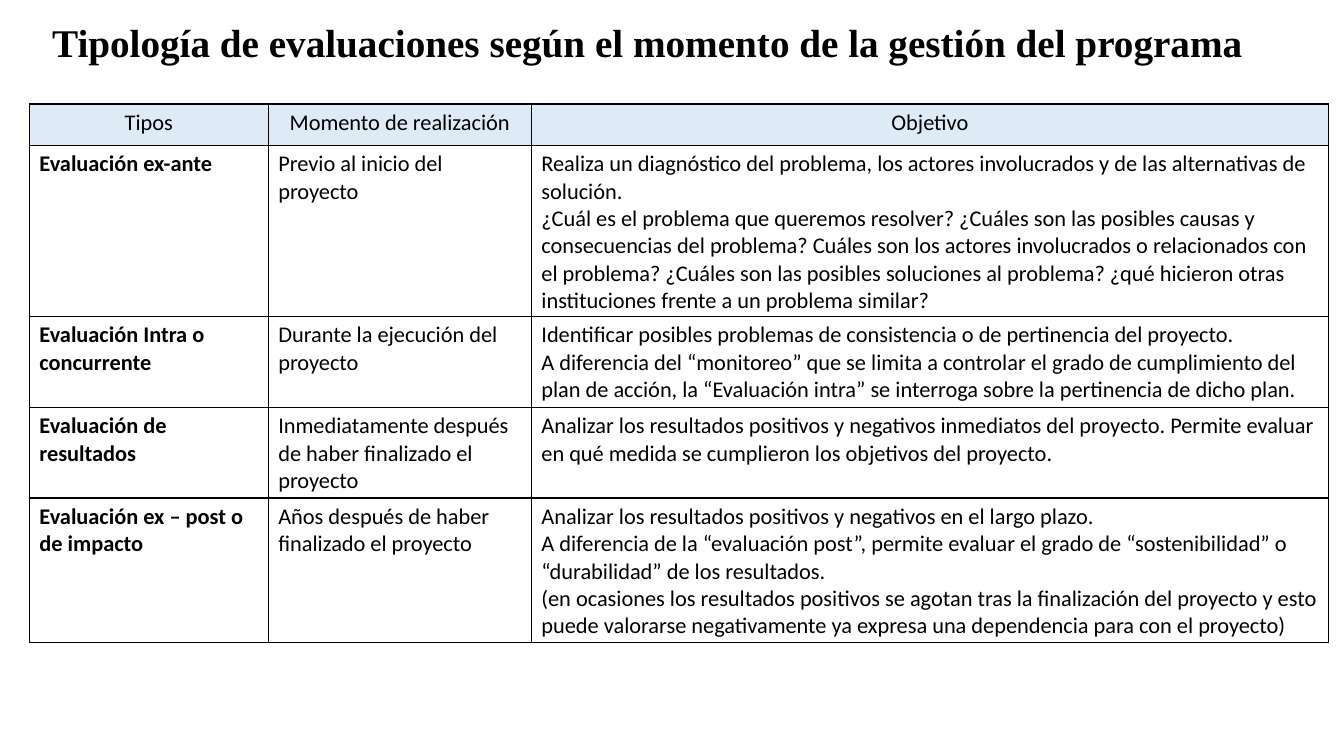
from dataclasses import dataclass

from lxml.etree import SubElement
from pptx import Presentation
from pptx.dml.color import RGBColor as Rgb
from pptx.enum.text import MSO_ANCHOR as Anchor, PP_ALIGN as Align
from pptx.oxml.ns import qn
from pptx.slide import Slide
from pptx.table import Table, _Cell as Cell
from pptx.text.text import TextFrame as Frame
from pptx.util import Cm, Pt

BLACK = "000000"
PALE = "DEEBF7"
WIDTHS = (6.02, 6.63, 20.09)
ROW = 1.04
HEADS = ("Tipos", "Momento de realización", "Objetivo")


@dataclass(frozen=True)
class Stage:
    name: str
    moment: str
    goals: tuple[str, ...]


@dataclass(frozen=True)
class Style:
    font: str = "Calibri"
    size: int = 16
    bold: bool = False
    align: Align = Align.LEFT


STAGES = (
    Stage(
        "Evaluación ex-ante",
        "Previo al inicio del proyecto",
        (
            "Realiza un diagnóstico del problema, los actores involucrados y de las "
            "alternativas de solución.",
            "¿Cuál es el problema que queremos resolver? ¿Cuáles son las posibles causas y "
            "consecuencias del problema? Cuáles son los actores involucrados o relacionados "
            "con el problema? ¿Cuáles son las posibles soluciones al problema? ¿qué hicieron "
            "otras instituciones frente a un problema similar?",
        ),
    ),
    Stage(
        "Evaluación Intra o concurrente",
        "Durante la ejecución del proyecto",
        (
            "Identificar posibles problemas de consistencia o de pertinencia del proyecto.",
            "A diferencia del “monitoreo” que se limita a controlar el grado de cumplimiento "
            "del plan de acción, la “Evaluación intra” se interroga sobre la pertinencia de "
            "dicho plan.",
        ),
    ),
    Stage(
        "Evaluación de resultados",
        "Inmediatamente después de haber finalizado el proyecto",
        (
            "Analizar los resultados positivos y negativos inmediatos del proyecto. Permite "
            "evaluar en qué medida se cumplieron los objetivos del proyecto.",
        ),
    ),
    Stage(
        "Evaluación ex – post o de impacto",
        "Años después de haber finalizado el proyecto",
        (
            "Analizar los resultados positivos y negativos en el largo plazo.",
            "A diferencia de la “evaluación post”, permite evaluar el grado de "
            "“sostenibilidad” o “durabilidad” de los resultados.",
            "(en ocasiones los resultados positivos se agotan tras la finalización del "
            "proyecto y esto puede valorarse negativamente ya expresa una dependencia para "
            "con el proyecto)",
        ),
    ),
)

TITLE = Style("Times New Roman", 28, True, Align.CENTER)
HEAD = Style(align=Align.CENTER)
NAME = Style(bold=True)
BODY = Style()


def color(code: str) -> Rgb:
    return Rgb.from_string(code)


def write(frame: Frame, text: str, style: Style) -> None:
    frame.text = text
    for para in frame.paragraphs:
        para.alignment = style.align
        for run in para.runs:
            run.font.name = style.font
            run.font.size = Pt(style.size)
            run.font.bold = style.bold
            run.font.color.rgb = color(BLACK)


def border(cell: Cell) -> None:
    props = cell._tc.get_or_add_tcPr()
    for side in ("a:lnL", "a:lnR", "a:lnT", "a:lnB"):
        line = SubElement(props, qn(side), w=str(Pt(1)))
        fill = SubElement(line, qn("a:solidFill"))
        SubElement(fill, qn("a:srgbClr"), val=BLACK)


def fill_row(table: Table, row: int, texts: tuple[str, ...], styles: tuple[Style, ...]) -> None:
    for col, (text, style) in enumerate(zip(texts, styles)):
        cell = table.cell(row, col)
        write(cell.text_frame, text, style)
        border(cell)
        if row == 0:
            cell.fill.solid()
            cell.fill.fore_color.rgb = color(PALE)
        else:
            cell.fill.background()


def add_title(slide: Slide) -> None:
    box = slide.shapes.add_textbox(Cm(-1.65), Cm(-0.91), Cm(35.92), Cm(4.17))
    frame = box.text_frame
    frame.word_wrap = True
    frame.vertical_anchor = Anchor.MIDDLE
    write(frame, "Tipología de evaluaciones según el momento de la gestión del programa", TITLE)
    frame.paragraphs[0].line_spacing = 0.8


def add_grid(slide: Slide) -> None:
    rows = len(STAGES) + 1
    table = slide.shapes.add_table(
        rows, len(WIDTHS), Cm(0.74), Cm(2.62), Cm(sum(WIDTHS)), Cm(ROW * rows)
    ).table
    table.first_row = False
    table.horz_banding = False
    for column, width in zip(table.columns, WIDTHS):
        column.width = Cm(width)
    fill_row(table, 0, HEADS, (HEAD,) * len(HEADS))
    for row, stage in enumerate(STAGES, 1):
        texts = (stage.name, stage.moment, "\n".join(stage.goals))
        fill_row(table, row, texts, (NAME, BODY, BODY))


def main() -> None:
    deck = Presentation()
    deck.slide_width = Cm(33.87)
    deck.slide_height = Cm(19.05)
    slide = deck.slides.add_slide(deck.slide_layouts[6])
    add_title(slide)
    add_grid(slide)
    deck.save("out.pptx")


if __name__ == "__main__":
    main()
